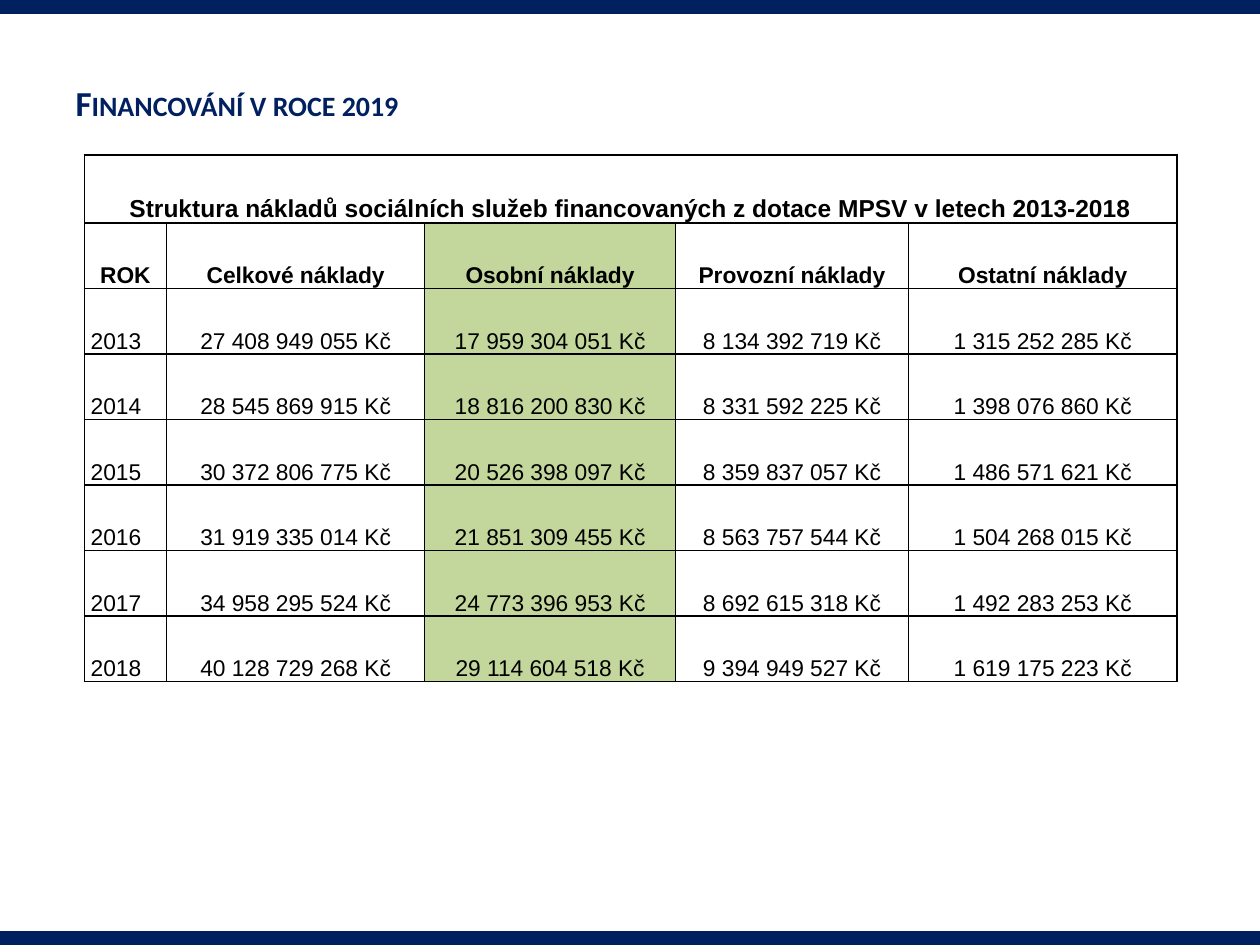
from dataclasses import dataclass

from lxml.etree import SubElement
from pptx import Presentation
from pptx.dml.color import RGBColor
from pptx.enum.shapes import MSO_SHAPE
from pptx.enum.text import MSO_ANCHOR, MSO_AUTO_SIZE, PP_ALIGN
from pptx.oxml.ns import qn
from pptx.util import Inches, Pt


@dataclass(frozen=True)
class Theme:
    navy: RGBColor = RGBColor.from_string("002060")
    green: RGBColor = RGBColor.from_string("C3D69B")
    black: RGBColor = RGBColor.from_string("000000")
    title_size: Pt = Pt(20)
    caption_size: Pt = Pt(14)
    cell_size: Pt = Pt(13)
    border_width: Pt = Pt(1)


theme = Theme()

CAPTION = "Struktura nákladů sociálních služeb financovaných z dotace MPSV v letech 2013-2018"
HEADERS = ["ROK", "Celkové náklady", "Osobní náklady", "Provozní náklady", "Ostatní náklady"]
COSTS = [
    ["2013", "27 408 949 055 Kč", "17 959 304 051 Kč", "8 134 392 719 Kč", "1 315 252 285 Kč"],
    ["2014", "28 545 869 915 Kč", "18 816 200 830 Kč", "8 331 592 225 Kč", "1 398 076 860 Kč"],
    ["2015", "30 372 806 775 Kč", "20 526 398 097 Kč", "8 359 837 057 Kč", "1 486 571 621 Kč"],
    ["2016", "31 919 335 014 Kč", "21 851 309 455 Kč", "8 563 757 544 Kč", "1 504 268 015 Kč"],
    ["2017", "34 958 295 524 Kč", "24 773 396 953 Kč", "8 692 615 318 Kč", "1 492 283 253 Kč"],
    ["2018", "40 128 729 268 Kč", "29 114 604 518 Kč", "9 394 949 527 Kč", "1 619 175 223 Kč"],
]
COLUMN_WIDTHS = [0.65, 2.05, 1.99, 1.85, 2.13]
CAPTION_HEIGHT, ROW_HEIGHT = 0.54, 0.52
HIGHLIGHTED_COLUMN = 2


def add_run(paragraph, text, font_name, size, color, bold):
    run = paragraph.add_run()
    run.text = text
    run.font.name = font_name
    run.font.size = size
    run.font.color.rgb = color
    run.font.bold = bold
    return run


def add_borders(cell):
    properties = cell._tc.get_or_add_tcPr()
    for side in ("a:lnL", "a:lnR", "a:lnT", "a:lnB"):
        line = SubElement(properties, qn(side), w=str(theme.border_width))
        fill = SubElement(line, qn("a:solidFill"))
        SubElement(fill, qn("a:srgbClr"), val=str(theme.black))


presentation = Presentation()
presentation.slide_width = Inches(10)
presentation.slide_height = Inches(7.5)
slide = presentation.slides.add_slide(presentation.slide_layouts[5])

# Bars along the top and bottom edges
for top in (0, 7.39):
    bar = slide.shapes.add_shape(
        MSO_SHAPE.RECTANGLE, Inches(0), Inches(top), Inches(10), Inches(0.11))
    bar.shadow.inherit = False
    bar.fill.solid()
    bar.fill.fore_color.rgb = theme.navy
    bar.line.fill.background()

# Title
title = slide.shapes.title
title.left, title.top = Inches(0.5), Inches(0.6)
title.width, title.height = Inches(9.33), Inches(0.44)
frame = title.text_frame
frame.word_wrap = True
frame.auto_size = MSO_AUTO_SIZE.SHAPE_TO_FIT_TEXT
frame.vertical_anchor = MSO_ANCHOR.TOP
paragraph = frame.paragraphs[0]
paragraph.alignment = PP_ALIGN.LEFT
run = add_run(paragraph, "Financování v roce 2019", "Calibri",
              theme.title_size, theme.navy, True)
run._r.get_or_add_rPr().set("cap", "small")

# Cost table: a caption row across all columns, a header row, one row per year
rows = [[CAPTION, "", "", "", ""], HEADERS, *COSTS]
row_heights = [CAPTION_HEIGHT] + [ROW_HEIGHT] * (len(rows) - 1)
table = slide.shapes.add_table(
    len(rows), len(HEADERS), Inches(0.67), Inches(1.23),
    Inches(sum(COLUMN_WIDTHS)), Inches(sum(row_heights))).table
table.first_row = False
table.horz_banding = False
for column, width in zip(table.columns, COLUMN_WIDTHS):
    column.width = Inches(width)
for row, height in zip(table.rows, row_heights):
    row.height = Inches(height)
table.cell(0, 0).merge(table.cell(0, len(HEADERS) - 1))

for row_index, texts in enumerate(rows):
    is_heading = row_index < 2
    size = theme.caption_size if row_index == 0 else theme.cell_size
    for column_index, text in enumerate(texts):
        cell = table.cell(row_index, column_index)
        cell.margin_left = cell.margin_right = Inches(0.05)
        cell.margin_top = cell.margin_bottom = Inches(0)
        cell.vertical_anchor = MSO_ANCHOR.BOTTOM
        add_borders(cell)
        if column_index == HIGHLIGHTED_COLUMN and row_index > 0:
            cell.fill.solid()
            cell.fill.fore_color.rgb = theme.green
        else:
            cell.fill.background()
        if text:
            paragraph = cell.text_frame.paragraphs[0]
            centered = is_heading or column_index > 0
            paragraph.alignment = PP_ALIGN.CENTER if centered else PP_ALIGN.LEFT
            add_run(paragraph, text, "Arial", size, theme.black, is_heading)

presentation.save("out.pptx")
